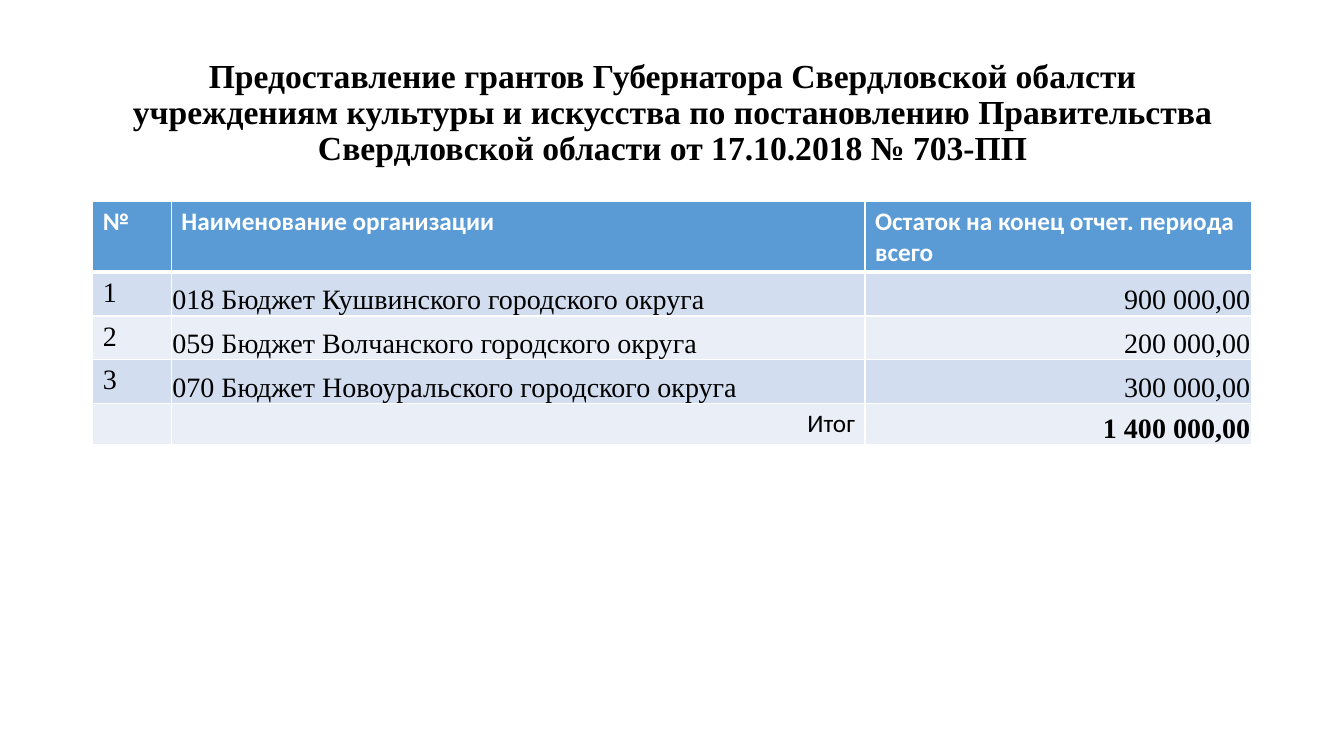
"""Build a slide with a table of governor's grants to cultural institutions."""
from lxml.etree import SubElement
from pptx import Presentation
from pptx.dml.color import RGBColor
from pptx.enum.text import MSO_ANCHOR as Anchor, PP_ALIGN as Align
from pptx.oxml.ns import qn
from pptx.util import Inches, Pt

COLORS = {"header": "5B9BD5", "odd": "D2DEEF", "even": "EAEFF7",
          "white": "FFFFFF", "black": "000000"}
SERIF, SANS = "Times New Roman", "Calibri"


def write(frame, text, font=SERIF, size=20, color="black", bold=False,
          align=Align.LEFT, spacing=1.0):
    paragraph = frame.paragraphs[0]
    paragraph.alignment = align
    paragraph.line_spacing = spacing
    run = paragraph.add_run()
    run.text = text
    run.font.name = font
    run.font.size = Pt(size)
    run.font.bold = bold
    run.font.color.rgb = RGBColor.from_string(COLORS[color])


def draw_borders(cell, row):
    for edge in ("lnL", "lnR", "lnT", "lnB"):
        width = 3 if (edge, row) in (("lnB", 0), ("lnT", 1)) else 1
        line = SubElement(cell._tc.get_or_add_tcPr(), qn(f"a:{edge}"), w=str(Pt(width)))
        SubElement(SubElement(line, qn("a:solidFill")), qn("a:srgbClr"), val=COLORS["white"])


deck = Presentation()
deck.slide_width, deck.slide_height = Inches(13.33), Inches(7.5)
slide = deck.slides.add_slide(deck.slide_layouts[6])
margin, content_width = Inches(0.92), Inches(11.5)

title = slide.shapes.add_textbox(margin, Inches(0.4), content_width, Inches(1.45)).text_frame
title.word_wrap = True
title.vertical_anchor = Anchor.MIDDLE
write(title, "Предоставление грантов Губернатора Свердловской обалсти учреждениям "
      "культуры и искусства по постановлению Правительства Свердловской области "
      "от 17.10.2018 № 703-ПП", size=24, bold=True, align=Align.CENTER, spacing=0.9)

grants = [
    ("№", "Наименование организации", "Остаток на конец отчет. периода всего"),
    ("1", "018 Бюджет Кушвинского городского округа", "900 000,00"),
    ("2", "059 Бюджет Волчанского городского округа", "200 000,00"),
    ("3", "070 Бюджет Новоуральского городского округа", "300 000,00"),
    ("", "Итог", "1 400 000,00"),
]
column_widths = (0.78, 6.88, 3.83)
header_height, row_height = 0.7, 0.41
total_row = len(grants) - 1

table = slide.shapes.add_table(
    len(grants), len(column_widths), margin, Inches(2), content_width,
    Inches(header_height + row_height * total_row)).table
for column, width in zip(table.columns, column_widths):
    column.width = Inches(width)

for row, texts in enumerate(grants):
    table.rows[row].height = Inches(row_height if row else header_height)
    band = ("odd" if row % 2 else "even") if row else "header"
    for col, text in enumerate(texts):
        cell = table.cell(row, col)
        draw_borders(cell, row)
        cell.fill.solid()
        cell.fill.fore_color.rgb = RGBColor.from_string(COLORS[band])
        is_total_label = (row, col) == (total_row, 1)
        if row and col and not is_total_label:
            cell.vertical_anchor = Anchor.BOTTOM
            cell.margin_left = cell.margin_right = cell.margin_top = Inches(0.01)
            cell.margin_bottom = 0
        if not text:
            continue
        if row == 0:
            style = dict(font=SANS, size=18, color="white", bold=True)
        elif is_total_label:
            style = dict(font=SANS, size=18, align=Align.RIGHT)
        else:
            style = dict(bold=row == total_row, align=Align.RIGHT if col == 2 else Align.LEFT)
        write(cell.text_frame, text, **style)

deck.save("out.pptx")
